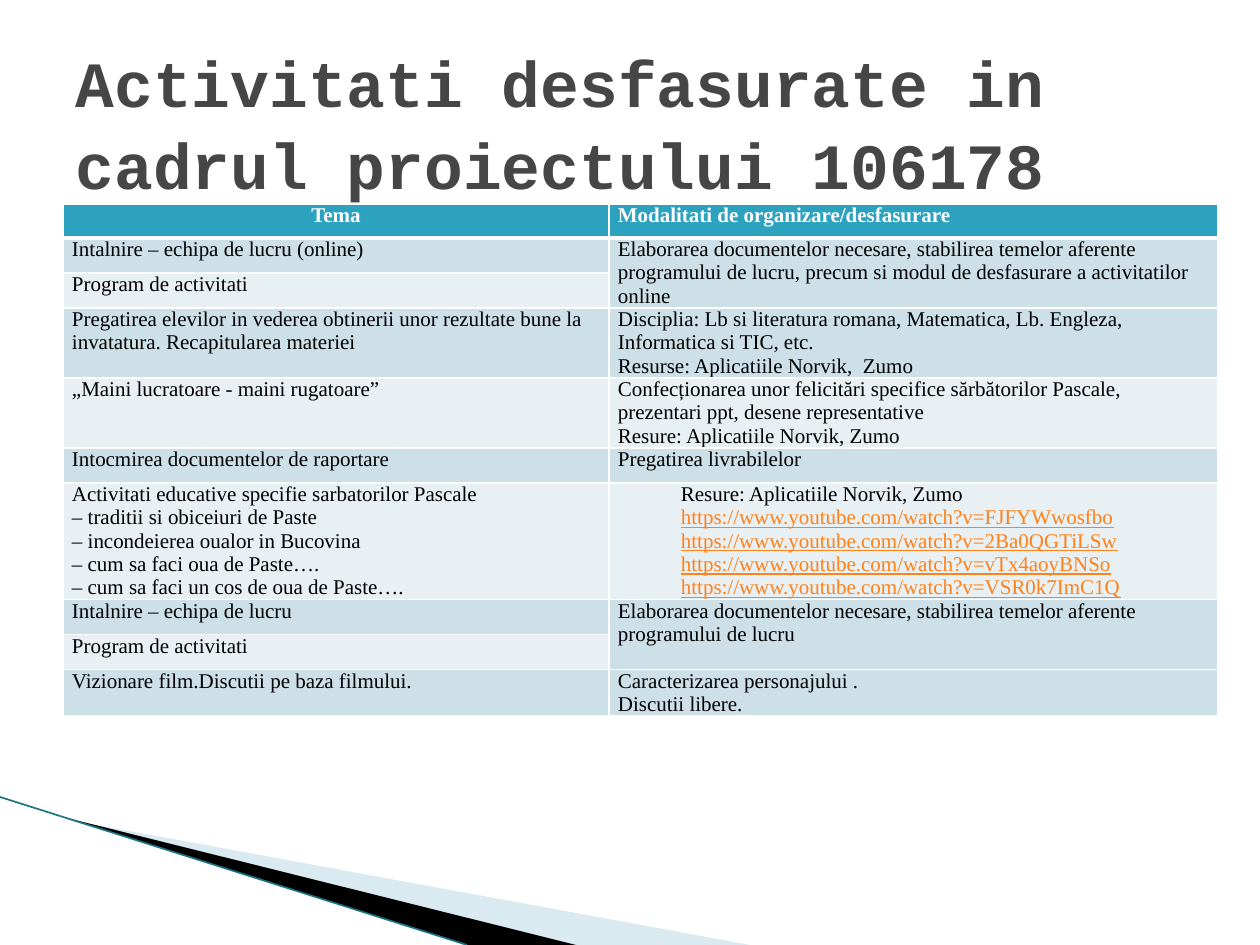
from lxml.etree import SubElement
from pptx import Presentation
from pptx.dml.color import RGBColor as Color
from pptx.enum.shapes import MSO_CONNECTOR as Connector
from pptx.enum.text import MSO_ANCHOR as Anchor, PP_ALIGN as Align
from pptx.oxml.ns import qn
from pptx.util import Pt

PX = 914400 // 126
COLORS = {
    "title": "464646", "text": "000000", "white": "FFFFFF", "header": "2DA2BF",
    "odd": "CDE0E8", "even": "E8F0F4", "link": "FF8119",
    "light wedge": "A0CBDC", "dark wedge": "000000", "edge": "1B7587",
}
COLUMNS = [546, 609]
ROW_HEIGHTS = [34, 35, 35, 70, 70, 35, 116, 35, 35, 46]
LINKS = [f"https://www.youtube.com/watch?v={video}" for video in
         ("FJFYWwosfbo", "2Ba0QGTiLSw", "vTx4aoyBNSo", "VSR0k7ImC1Q")]
ROWS = [
    (["Tema"], ["Modalitati de organizare/desfasurare"]),
    (["Intalnire – echipa de lucru (online)"],
     ["Elaborarea documentelor necesare, stabilirea temelor aferente programului de lucru, "
      "precum si modul de desfasurare a activitatilor online"]),
    (["Program de activitati"], None),
    (["Pregatirea elevilor in vederea obtinerii unor rezultate bune la invatatura. "
      "Recapitularea materiei"],
     ["Disciplia: Lb si literatura romana, Matematica, Lb. Engleza, Informatica si TIC, etc.",
      "Resurse: Aplicatiile Norvik,  Zumo"]),
    (["„Maini lucratoare - maini rugatoare”"],
     ["Confecționarea unor felicitări specifice sărbătorilor Pascale, prezentari ppt, "
      "desene representative",
      "Resure: Aplicatiile Norvik, Zumo"]),
    (["Intocmirea documentelor de raportare"], ["Pregatirea livrabilelor"]),
    (["Activitati educative specifie sarbatorilor Pascale",
      "– traditii si obiceiuri de Paste",
      "– incondeierea oualor in Bucovina",
      "– cum sa faci oua de Paste….",
      "– cum sa faci un cos de oua de Paste…."],
     ["Resure: Aplicatiile Norvik, Zumo", LINKS]),
    (["Intalnire – echipa de lucru"],
     ["Elaborarea documentelor necesare, stabilirea temelor aferente programului de lucru"]),
    (["Program de activitati"], None),
    (["Vizionare film.Discutii pe baza filmului."],
     ["Caracterizarea personajului .", "Discutii libere."]),
]
LINK_ROW = 6


def color(name):
    return Color.from_string(COLORS[name])


def set_values(target, values):
    for name, value in values.items():
        setattr(target, name, value)


def format_font(font, color_name, **values):
    set_values(font, values)
    font.color.rgb = color(color_name)


def add_wedge(slide, left, top, points, color_name, alpha=None):
    builder = slide.shapes.build_freeform(left + points[0][0], top + points[0][1], scale=PX)
    builder.add_line_segments([(left + x, top + y) for x, y in points[1:]])
    shape = builder.convert_to_shape()
    shape.shadow.inherit = False
    shape.line.fill.background()
    shape.fill.solid()
    shape.fill.fore_color.rgb = color(color_name)
    if alpha:
        fill_color = shape.fill._xPr.find(qn("a:solidFill"))[0]
        SubElement(fill_color, qn("a:alpha"), val=str(alpha * 1000))


def add_corner(slide, left, top, width, height):
    add_wedge(slide, left, top, [(69, 23), (750, height), (575, height), (69, 22)],
              "light wedge", 40)
    add_wedge(slide, left, top, [(67, 21), (576, height), (467, height), (68, 22)],
              "dark wedge")
    edge = slide.shapes.add_connector(
        Connector.STRAIGHT, left * PX, top * PX, (left + width) * PX, (top + height) * PX)
    edge.line.color.rgb = color("edge")
    edge.line.width = Pt(0.95)
    SubElement(edge._element.spPr, qn("a:effectLst"))


def place_title(slide, left, top, width, height):
    title = slide.shapes.title
    set_values(title, {"left": left * PX, "top": top * PX,
                       "width": width * PX, "height": height * PX})
    frame = title.text_frame
    frame.text = "Activitati desfasurate in cadrul proiectului 106178"
    set_values(frame, {"word_wrap": True, "vertical_anchor": Anchor.MIDDLE})
    paragraph = frame.paragraphs[0]
    set_values(paragraph, {"alignment": Align.LEFT, "line_spacing": 1.07})
    format_font(paragraph.runs[0].font, "title", name="Courier New", size=Pt(36.9), bold=True)


def set_borders(cell, bottom):
    properties = cell._tc.get_or_add_tcPr()
    for position, (side, width) in enumerate(
            {"lnL": 1, "lnR": 1, "lnT": 1, "lnB": bottom}.items()):
        line = SubElement(properties, qn(f"a:{side}"), w=str(Pt(width)))
        fill = SubElement(line, qn("a:solidFill"))
        SubElement(fill, qn("a:srgbClr"), val=COLORS["white"])
        properties.insert(position, line)


def add_run(paragraph, text, color_name, bold=False, underline=False):
    run = paragraph.add_run()
    run.text = text
    format_font(run.font, color_name, name="Times New Roman", size=Pt(12),
                bold=bold, underline=underline)


def fill_paragraph(paragraph, content, is_header):
    if isinstance(content, str):
        add_run(paragraph, content, "white" if is_header else "text", bold=is_header)
        return
    for index, link in enumerate(content):
        if index:
            add_run(paragraph, " ", "text")
        add_run(paragraph, link, "link", underline=True)


def fill_cell(cell, contents, row, column):
    is_header = row == 0
    set_values(cell, {"margin_left": 9 * PX, "margin_right": 9 * PX,
                      "margin_top": 0, "margin_bottom": 0})
    cell.fill.solid()
    cell.fill.fore_color.rgb = color("header" if is_header else "odd" if row % 2 else "even")
    if row >= 3 and not is_header:
        cell.fill.fore_color.rgb = color(BAND[row])
    set_borders(cell, 3 if is_header else 1)
    for index, content in enumerate(contents or []):
        frame = cell.text_frame
        paragraph = frame.paragraphs[0] if index == 0 else frame.add_paragraph()
        paragraph.alignment = Align.LEFT
        if is_header:
            paragraph.alignment = (Align.CENTER, Align.JUSTIFY)[column]
        if row == LINK_ROW and column == 1:
            paragraph._p.get_or_add_pPr().set("marL", str(63 * PX))
        fill_paragraph(paragraph, content, is_header)


BAND = {row: "odd" if row % 2 else "even" for row in range(len(ROWS))}


def add_activities(slide, left, top, width, height):
    table = slide.shapes.add_table(
        len(ROWS), len(COLUMNS), left * PX, top * PX, width * PX, height * PX).table
    for column, size in zip(table.columns, COLUMNS):
        column.width = size * PX
    for row, size in zip(table.rows, ROW_HEIGHTS):
        row.height = size * PX
    for row, cells in enumerate(ROWS):
        for column, contents in enumerate(cells):
            fill_cell(table.cell(row, column), contents, row, column)
        if cells[1] is None:
            table.cell(row - 1, 1).merge(table.cell(row, 1))


def main():
    presentation = Presentation()
    set_values(presentation, {"slide_width": 1260 * PX, "slide_height": 945 * PX})
    slide = presentation.slides.add_slide(presentation.slide_layouts[5])
    add_corner(slide, 0, 797, 467, 148)
    add_activities(slide, 63, 204, sum(COLUMNS), sum(ROW_HEIGHTS))
    place_title(slide, 63, 41, 1134, 158)
    presentation.save("out.pptx")


if __name__ == "__main__":
    main()
